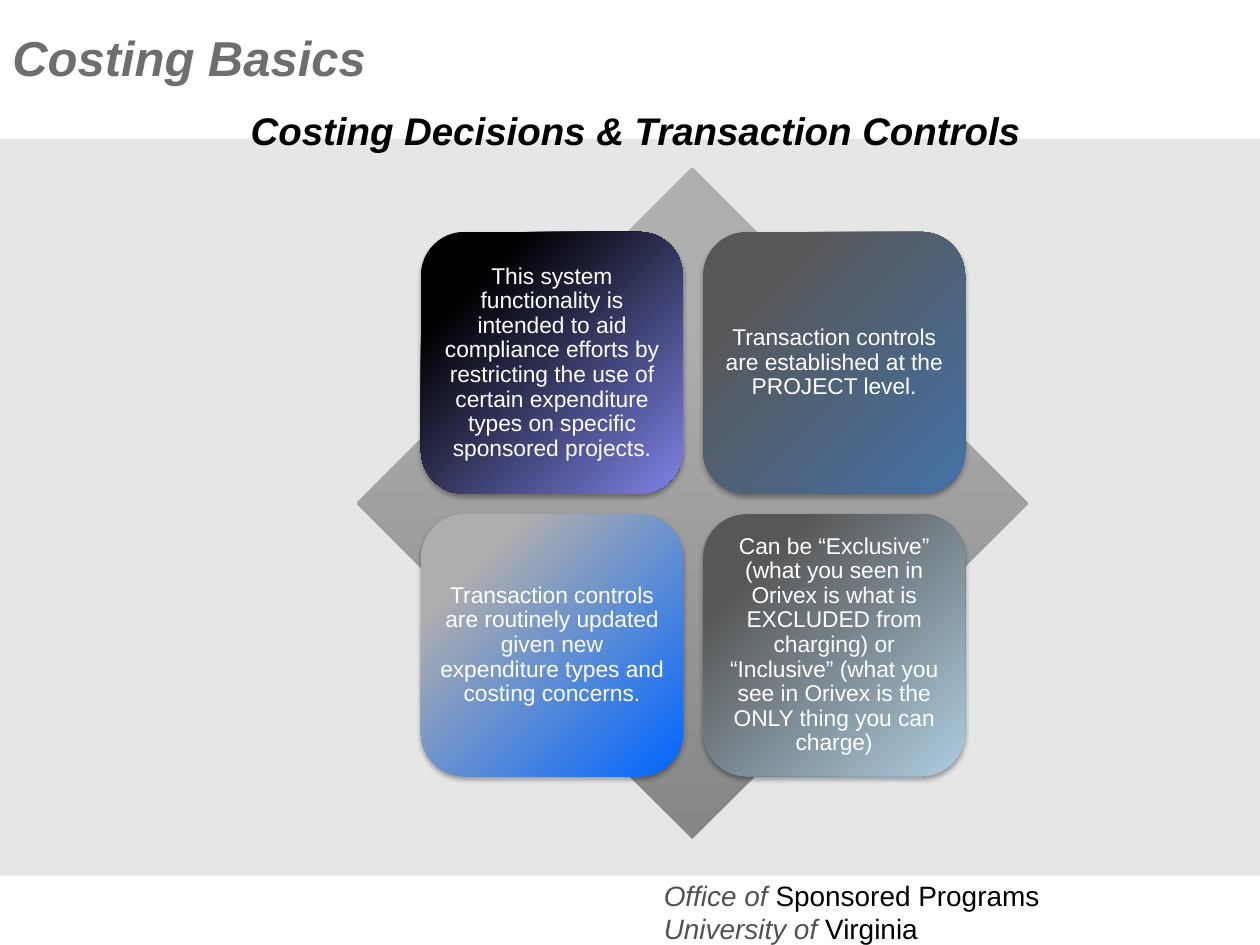
from dataclasses import dataclass

from lxml import etree
from pptx import Presentation
from pptx.dml.color import RGBColor
from pptx.enum import shapes, text
from pptx.oxml import ns
from pptx.util import Inches, Pt


@dataclass(frozen=True)
class Theme:
    font: str = "Arial"
    band: str = "E6E6E6"
    black: str = "000000"
    white: str = "FFFFFF"
    muted: str = "525252"
    heading: str = "6E6E6E"
    diamond: tuple = ("868686", "AFAFAF")
    heading_size: int = 28
    title_size: int = 22
    footer_size: int = 16
    card_size: int = 13


THEME = Theme()
CARDS = [
    ("This system functionality is intended to aid compliance efforts by "
     "restricting the use of certain expenditure types on specific sponsored projects.",
     ("7F84E7", "000000")),
    ("Transaction controls are established at the PROJECT level.",
     ("4471A6", "575757")),
    ("Transaction controls are routinely updated given new expenditure types "
     "and costing concerns.",
     ("0066FF", "AEAEAE")),
    ("Can be “Exclusive” (what you seen in Orivex is what is EXCLUDED from "
     "charging) or “Inclusive” (what you see in Orivex is the ONLY thing you can charge)",
     ("ADCDE0", "575757")),
]
FOOTER = [("Office of ", "Sponsored Programs"), ("University of ", "Virginia")]


def apply(target, values):
    for name, value in values.items():
        setattr(target, name, value)


def add_child(parent, tag, **attributes):
    return etree.SubElement(parent, ns.qn(tag), attributes)


def add_span(para, wording, size, color, **style):
    span = para.add_run()
    span.text = wording
    apply(span.font, {"name": THEME.font, "size": Pt(size), **style})
    span.font.color.rgb = RGBColor.from_string(color)


def add_box(page, left, top, width, height, **frame_format):
    box = page.shapes.add_textbox(*map(Inches, (left, top, width, height)))
    apply(box.text_frame, {"word_wrap": True, **frame_format})
    return box.text_frame


def add_plain_shape(page, kind, left, top, width, height):
    shape = page.shapes.add_shape(kind, *map(Inches, (left, top, width, height)))
    shape.shadow.inherit = False
    shape.line.fill.background()
    return shape


def set_gradient(shape, colors, angle=None):
    shape.fill.background()
    empty = shape._element.spPr.find(ns.qn("a:noFill"))
    gradient = etree.Element(ns.qn("a:gradFill"), rotWithShape="1")
    stops = add_child(gradient, "a:gsLst")
    for place, color in zip((0, 80, 100), (*colors, colors[-1])):
        stop = add_child(stops, "a:gs", pos=str(place * 1000))
        add_child(stop, "a:srgbClr", val=color)
    if angle is None:
        sweep = add_child(gradient, "a:path", path="circle")
        add_child(sweep, "a:fillToRect", l="100000", t="100000")
    else:
        add_child(gradient, "a:lin", ang=str(angle * 60000), scaled="0")
    empty.getparent().replace(empty, gradient)


def set_shadow(shape):
    effects = shape._element.spPr.find(ns.qn("a:effectLst"))
    shadow = add_child(effects, "a:outerShdw", blurRad=str(Pt(3.1)),
                       dist=str(Pt(1.8)), dir="5400000", rotWithShape="0")
    color = add_child(shadow, "a:srgbClr", val=THEME.black)
    add_child(color, "a:alpha", val="35000")


def add_card(page, left, top, side, wording, colors):
    card = add_plain_shape(page, shapes.MSO_SHAPE.ROUNDED_RECTANGLE,
                           left, top, side, side)
    set_gradient(card, colors)
    set_shadow(card)
    margins = {f"margin_{edge}": Inches(0.05)
               for edge in ("left", "top", "right", "bottom")}
    apply(card.text_frame, {"word_wrap": True,
                            "vertical_anchor": text.MSO_ANCHOR.MIDDLE, **margins})
    para = card.text_frame.paragraphs[0]
    apply(para, {"alignment": text.PP_ALIGN.CENTER, "line_spacing": 0.9})
    add_span(para, wording, THEME.card_size, THEME.white)


def add_matrix(page):
    diamond = add_plain_shape(page, shapes.MSO_SHAPE.DIAMOND, 2.83, 1.33, 5.33, 5.33)
    set_gradient(diamond, THEME.diamond, angle=270)
    left, top, side, pitch = 3.34, 1.84, 2.08, 2.24
    for index, (wording, colors) in enumerate(CARDS):
        row, column = divmod(index, 2)
        add_card(page, left + column * pitch, top + row * pitch, side, wording, colors)


def add_title(page):
    frame = add_box(page, 0.67, 0.45, 8.75, 1.17, margin_left=0, margin_right=0,
                    vertical_anchor=text.MSO_ANCHOR.MIDDLE)
    para = frame.paragraphs[0]
    para.alignment = text.PP_ALIGN.CENTER
    add_span(para, "Costing Decisions & Transaction Controls",
             THEME.title_size, THEME.black, bold=True, italic=True)


def add_heading(page):
    frame = add_box(page, 0, 0.17, 9.33, 0.57)
    add_span(frame.paragraphs[0], "Costing Basics",
             THEME.heading_size, THEME.heading, bold=True, italic=True)


def add_footer(page):
    frame = add_box(page, 5.17, 6.92, 4, 0.64)
    for index, (lead, name) in enumerate(FOOTER):
        para = frame.add_paragraph() if index else frame.paragraphs[0]
        add_span(para, lead, THEME.footer_size, THEME.muted, italic=True)
        add_span(para, name, THEME.footer_size, THEME.black)


def main():
    deck = Presentation()
    apply(deck, {"slide_width": Inches(10), "slide_height": Inches(7.5)})
    page = deck.slides.add_slide(deck.slide_layouts[6])
    band = add_plain_shape(page, shapes.MSO_SHAPE.RECTANGLE, 0, 1.1, 10, 5.85)
    band.fill.solid()
    band.fill.fore_color.rgb = RGBColor.from_string(THEME.band)
    add_footer(page)
    add_title(page)
    add_matrix(page)
    add_heading(page)
    deck.save("out.pptx")


if __name__ == "__main__":
    main()
